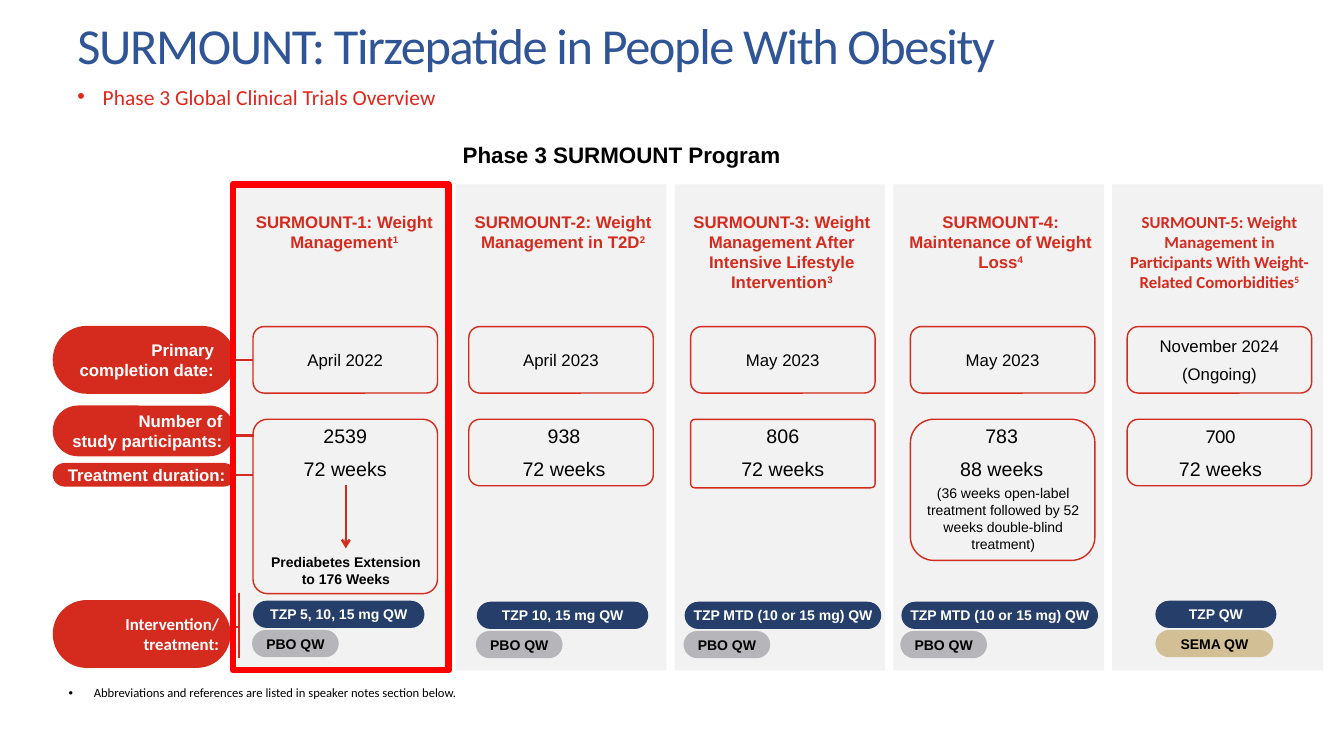
from dataclasses import dataclass

from lxml import etree
from pptx import Presentation
from pptx.dml.color import RGBColor
from pptx.enum.shapes import MSO_CONNECTOR as LINE, MSO_SHAPE as SHAPE
from pptx.enum.text import MSO_ANCHOR as ANCHOR, PP_ALIGN as ALIGN
from pptx.oxml.ns import qn
from pptx.util import Inches, Pt

RED = RGBColor(0xD5, 0x2B, 0x1E)
SUBTITLE_RED = RGBColor(0xE1, 0x25, 0x1B)
FRAME_RED = RGBColor(0xFF, 0x00, 0x00)
TITLE_BLUE = RGBColor(0x2F, 0x55, 0x97)
NAVY = RGBColor(0x26, 0x3F, 0x6A)
GREY = RGBColor(0xB6, 0xB6, 0xBA)
TAN = RGBColor(0xD3, 0xBF, 0x96)
PANEL_GREY = RGBColor(0xF2, 0xF2, 0xF2)
BLACK = RGBColor(0x00, 0x00, 0x00)
WHITE = RGBColor(0xFF, 0xFF, 0xFF)

PANEL_TOP, PANEL_W, PANEL_H = 1.83, 2.09, 4.82
PANEL_LEFT, PANEL_STEP = 2.35, 2.17
CARD_W, DATE_TOP, DATE_H, SIZE_TOP = 1.83, 3.24, 0.66, 4.16
PILL_H, PILL_STEP = 0.27, 0.29


@dataclass
class Study:
    name: str
    date: str
    participants: str
    duration: str
    card_left: float
    card_h: float
    rounding: float
    pills_left: float
    pills_top: float
    drug: str
    drug_w: float
    control: str = "PBO QW"
    control_w: float = 0.86
    control_fill: RGBColor = GREY
    note: str = ""
    name_font: str = "Arial"
    count_font: str = "Arial"


STUDIES = [
    Study("SURMOUNT-1: Weight Management", "April 2022", "2539", "72 weeks",
          2.51, 1.73, 0.083, 2.51, 5.96, "TZP 5, 10, 15 mg QW", 1.7),
    Study("SURMOUNT-2: Weight Management in T2D", "April 2023", "938", "72 weeks",
          4.65, 0.66, 0.167, 4.73, 5.97, "TZP 10, 15 mg QW", 1.7),
    Study("SURMOUNT-3: Weight Management After Intensive Lifestyle Intervention",
          "May 2023", "806", "72 weeks",
          6.85, 0.68, 0.061, 6.79, 5.97, "TZP MTD (10 or 15 mg) QW", 1.95),
    Study("SURMOUNT-4: Maintenance of Weight Loss", "May 2023", "783", "88 weeks",
          9.03, 1.4, 0.167, 8.94, 5.97, "TZP MTD (10 or 15 mg) QW", 1.95,
          note="(36 weeks open-label treatment followed by 52 weeks double-blind treatment)"),
    Study("SURMOUNT-5: Weight Management in Participants With Weight-Related Comorbidities",
          "November 2024\n(Ongoing)", "700", "72 weeks",
          11.18, 0.66, 0.167, 11.46, 5.96, "TZP QW", 1.2, "SEMA QW", 1.17, TAN,
          name_font="Calibri", count_font="Calibri"),
]


def write(shape, text, size, color=BLACK, bold=False, font="Arial", align=ALIGN.CENTER,
          anchor=ANCHOR.TOP, insets=(0.1, 0.05, 0.1, 0.05), wrap=True, gap=0):
    """Fill a shape with one paragraph per line of text; return the paragraphs."""
    frame = shape.text_frame
    frame.word_wrap, frame.vertical_anchor = wrap, anchor
    (frame.margin_left, frame.margin_top,
     frame.margin_right, frame.margin_bottom) = map(Inches, insets)
    for number, line in enumerate(text.split("\n")):
        paragraph = frame.add_paragraph() if number else frame.paragraphs[0]
        paragraph.alignment = align
        paragraph.space_before = Pt(gap if number else 0)
        add_run(paragraph, line, size, color, bold, font)
    return frame.paragraphs


def add_run(paragraph, text, size, color, bold, font):
    run = paragraph.add_run()
    run.text = text
    run.font.size, run.font.bold, run.font.name = Pt(size), bold, font
    run.font.color.rgb = color
    return run


def add_text(slide, box, text, size, **style):
    return write(slide.shapes.add_textbox(*map(Inches, box)), text, size, **style)


def add_box(slide, kind, box, fill=None, line=None, width=1, rounding=None):
    shape = slide.shapes.add_shape(kind, *map(Inches, box))
    shape.shadow.inherit = False
    if fill is None:
        shape.fill.background()
    else:
        shape.fill.solid()
        shape.fill.fore_color.rgb = fill
    if line is None:
        shape.line.fill.background()
    else:
        shape.line.color.rgb = line
        shape.line.width = Pt(width)
    if rounding is not None:
        shape.adjustments[0] = rounding
    return shape


def add_line(slide, x1, y1, x2, y2, arrow=False):
    line = slide.shapes.add_connector(LINE.STRAIGHT, *map(Inches, (x1, y1, x2, y2)))
    line.line.color.rgb = RED
    line.line.width = Pt(1.75)
    if arrow:
        etree.SubElement(line.line._get_or_add_ln(), qn("a:tailEnd"), type="arrow")
    etree.SubElement(line._element.spPr, qn("a:effectLst"))
    return line


def add_bullet(paragraph):
    properties = paragraph._p.get_or_add_pPr()
    properties.set("marL", str(Inches(0.25)))
    properties.set("indent", str(-Inches(0.25)))
    etree.SubElement(properties, qn("a:buFont"), typeface="Arial")
    etree.SubElement(properties, qn("a:buChar"), char="•")


def add_heading(slide, left, width):
    title = add_text(slide, (left, -0.29, width, 1.08),
                     "SURMOUNT: Tirzepatide in People With Obesity", 36, color=TITLE_BLUE,
                     font="Calibri", align=ALIGN.LEFT, anchor=ANCHOR.BOTTOM)[0]
    title.line_spacing = Pt(36)
    title.runs[0]._r.get_or_add_rPr().set("spc", "-100")
    subtitle = add_text(slide, (left, 0.85, width, 0.28),
                        "Phase 3 Global Clinical Trials Overview", 15.3, color=SUBTITLE_RED,
                        font="Calibri", align=ALIGN.LEFT, anchor=ANCHOR.MIDDLE)[0]
    subtitle.line_spacing = 0.7
    add_bullet(subtitle)
    add_text(slide, (4.54, 1.35, 3.25, 0.36), "Phase 3 SURMOUNT Program", 16, bold=True,
             anchor=ANCHOR.MIDDLE, insets=(0, 0, 0, 0))


def add_study(slide, study, left):
    """Draw one study column; return its date card."""
    add_box(slide, SHAPE.RECTANGLE, (left, PANEL_TOP, PANEL_W, PANEL_H), PANEL_GREY)
    name = add_text(slide, (left + 0.02, PANEL_TOP + 0.22, PANEL_W, 1.11), study.name, 12,
                    color=RED, bold=True, font=study.name_font)[0]
    reference = add_run(name, study.name[9], 12, RED, True, study.name_font)
    reference._r.get_or_add_rPr().set("baseline", "30000")

    # Completion date
    date_card = add_box(slide, SHAPE.ROUNDED_RECTANGLE,
                        (study.card_left, DATE_TOP, CARD_W, DATE_H), line=RED)
    write(date_card, study.date, 12, anchor=ANCHOR.MIDDLE, insets=(0, 0, 0, 0), gap=5)

    # Participants and duration
    add_box(slide, SHAPE.ROUNDED_RECTANGLE, (study.card_left, SIZE_TOP, CARD_W, study.card_h),
            line=RED, rounding=study.rounding)
    text_left = left + 0.56
    add_text(slide, (text_left, SIZE_TOP, 1.03, 0.34), study.participants, 14,
             font=study.count_font)
    add_text(slide, (text_left, SIZE_TOP + 0.32, 1.03, 0.34), study.duration, 14)
    if study.note:
        add_text(slide, (study.card_left + 0.02, SIZE_TOP + 0.6, 1.8, 0.77), study.note, 10)

    # Treatment arms
    arms = [(study.drug, study.drug_w, 0, NAVY, WHITE),
            (study.control, study.control_w, PILL_STEP, study.control_fill, BLACK)]
    for arm, width, drop, fill, color in arms:
        shift = -0.01 if drop and width < 1 else 0
        pill = add_box(slide, SHAPE.ROUNDED_RECTANGLE,
                       (study.pills_left + shift, study.pills_top + drop, width, PILL_H),
                       fill, rounding=0.5)
        write(pill, arm, 10, color=color, bold=True, anchor=ANCHOR.MIDDLE,
              insets=(0, 0, 0, 0), wrap=False)
    return date_card


def add_label(slide, text, box, left_inset, right_inset, font="Arial"):
    label = add_box(slide, SHAPE.ROUNDED_RECTANGLE, box, RED, RED, rounding=0.5)
    write(label, text, 12, color=WHITE, bold=True, font=font, align=ALIGN.RIGHT,
          anchor=ANCHOR.MIDDLE, insets=(left_inset, 0, right_inset, 0))
    return label


def add_row_labels(slide, left, first_date_card):
    primary = add_label(slide, "Primary completion date:", (left, 3.24, 1.8, 0.66), 0, 0.11)
    add_label(slide, "Number of\nstudy participants:", (left, 4.03, 1.79, 0.49), 0, 0.04)
    duration = add_label(slide, "Treatment duration:", (left, 4.6, 1.8, 0.22), 0, 0.06)
    add_label(slide, "Intervention/treatment:", (left, 5.96, 1.75, 0.66), 0.5, 0.01, "Calibri")

    # Lines to the first study
    date_line = add_line(slide, 2.33, 3.57, 2.51, 3.57)
    date_line.begin_connect(primary, 3)
    date_line.end_connect(first_date_card, 1)
    add_line(slide, 2.33, 4.71, 2.51, 4.71).begin_connect(duration, 3)
    add_line(slide, 2.28, 4.32, 2.52, 4.32)
    add_line(slide, 2.28, 6.22, 2.38, 6.22)
    add_line(slide, 2.37, 5.88, 2.37, 6.53)


def add_extension(slide, left):
    add_line(slide, left + 0.91, 4.81, left + 0.91, 5.44, arrow=True)
    add_text(slide, (left, 5.44, 1.82, 0.44), "Prediabetes Extension to 176 Weeks", 10, bold=True)


def add_footnote(slide, box):
    footnote = add_text(slide, box,
                        "Abbreviations and references are listed in speaker notes section below.",
                        9, font="Calibri", align=ALIGN.LEFT, anchor=ANCHOR.BOTTOM,
                        insets=(0, 0, 0, 0))[0]
    footnote.line_spacing = 0.9
    add_bullet(footnote)


def main():
    deck = Presentation()
    deck.slide_width, deck.slide_height = Inches(13.33), Inches(7.5)
    slide = deck.slides.add_slide(deck.slide_layouts[6])
    add_heading(slide, 0.67, 11.98)
    date_cards = [add_study(slide, study, PANEL_LEFT + number * PANEL_STEP)
                  for number, study in enumerate(STUDIES)]
    add_extension(slide, 2.52)
    add_row_labels(slide, 0.53, date_cards[0])
    add_footnote(slide, (0.68, 6.38, 11.98, 0.57))
    # Highlight around the first study
    add_box(slide, SHAPE.RECTANGLE, (2.31, PANEL_TOP, 2.14, PANEL_H), line=FRAME_RED, width=4.5)
    deck.save("out.pptx")


if __name__ == "__main__":
    main()
